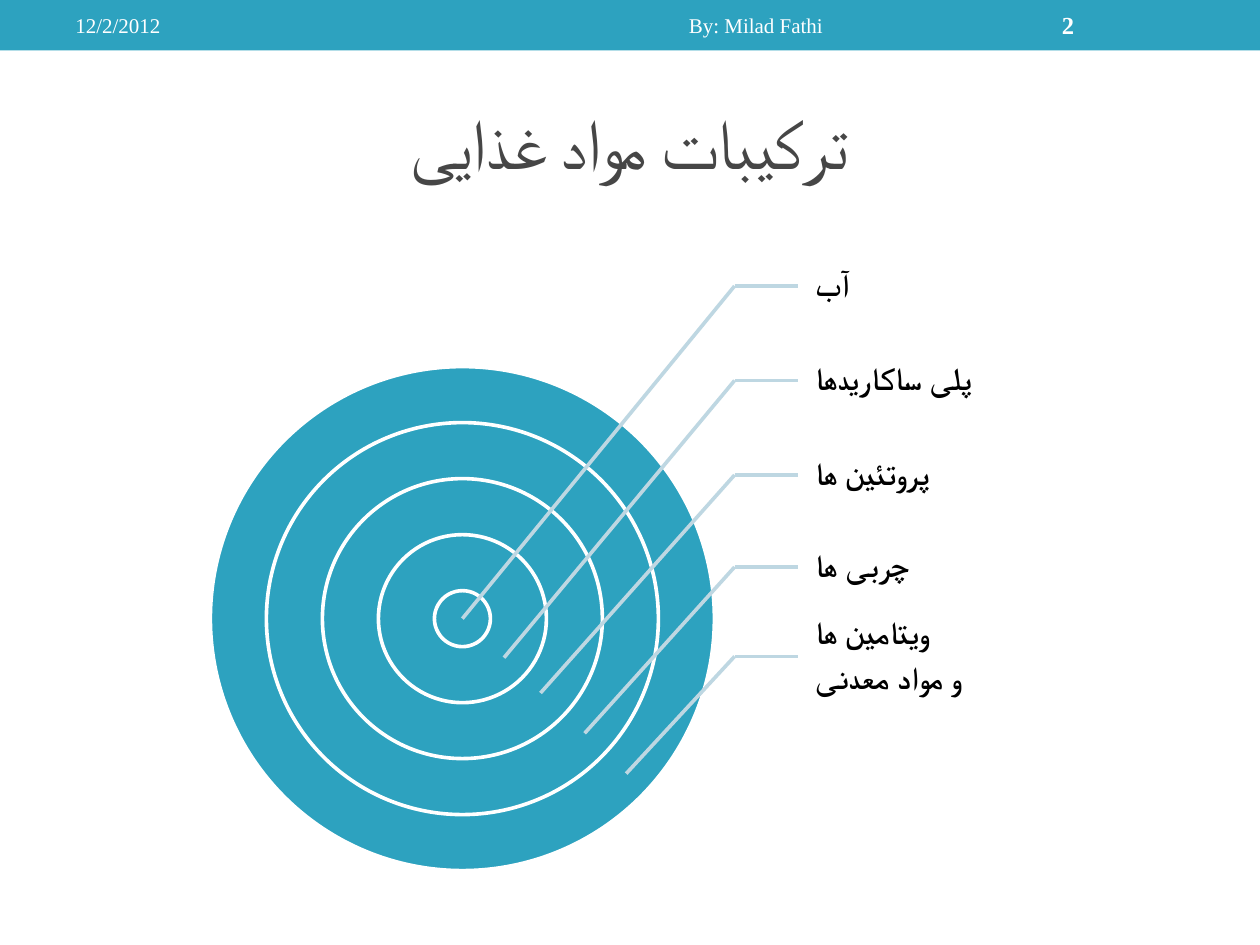
from lxml.etree import SubElement
from pptx import Presentation
from pptx.dml.color import RGBColor
from pptx.enum.shapes import MSO_CONNECTOR, MSO_SHAPE
from pptx.enum.text import MSO_ANCHOR, MSO_AUTO_SIZE, PP_ALIGN
from pptx.oxml.ns import qn
from pptx.util import Inches, Pt

TEAL, PALE, WHITE, GREY, BLACK = "2DA2BF", "BED7E2", "FFFFFF", "464646", "000000"
CENTER = (3.67, 4.91)
OUTER_DIAMETER = 4
RING_STEPS = (9, 7, 5, 3, 1)
ELBOW_X, LABEL_X = 5.83, 6.33
LABEL_WIDTH, LABEL_HEIGHT = 2, 0.71

# Label lines, height of the leader line, point it leads to
COMPONENTS = [
    (["آب"], 2.27, CENTER),
    (["پلی ساکاریدها"], 3.02, (4, 5.22)),
    (["پروتئین ها"], 3.77, (4.29, 5.5)),
    (["چربی ها"], 4.5, (4.64, 5.82)),
    (["ویتامین ها", "و مواد معدنی"], 5.21, (4.97, 6.14)),
]


def color(value):
    return RGBColor.from_string(value)


def apply(target, values):
    for name, value in values.items():
        setattr(target, name, value)


class FoodPage:
    """Holds the style and the slide being filled."""

    font = "Times New Roman"
    line_width = Pt(2.08)
    label_insets = {
        "margin_left": Inches(0.14),
        "margin_right": Inches(0.03),
        "margin_top": Inches(0.03),
        "margin_bottom": Inches(0.03),
    }
    label_spacing = {"line_spacing": 0.9, "space_after": Pt(6.3)}

    def __init__(self, deck):
        self.page = deck.slides.add_slide(deck.slide_layouts[5])

    def fill_text(self, box, lines, size, ink, bold=False, align=PP_ALIGN.LEFT,
                  rtl=False, tracking=None, frame_format=None, para_format=None):
        frame = box.text_frame
        apply(frame, {
            "word_wrap": True,
            "auto_size": MSO_AUTO_SIZE.NONE,
            "vertical_anchor": MSO_ANCHOR.MIDDLE,
            **(frame_format or {}),
        })
        for index, line in enumerate(lines):
            para = frame.add_paragraph() if index else frame.paragraphs[0]
            apply(para, {"alignment": align, **(para_format or {})})
            if rtl:
                para._p.get_or_add_pPr().set("rtl", "1")
            span = para.add_run()
            span.text = line
            apply(span.font, {"name": self.font, "size": Pt(size), "bold": bold})
            span.font.color.rgb = color(ink)
            properties = span.font._element
            SubElement(properties, qn("a:cs")).set("typeface", self.font)
            if tracking is not None:
                properties.set("spc", str(tracking * 100))

    def title(self, text, left, top, width, height):
        box = self.page.shapes.title
        apply(box, {"left": Inches(left), "top": Inches(top),
                    "width": Inches(width), "height": Inches(height)})
        self.fill_text(box, [text], 40, GREY, align=PP_ALIGN.CENTER, rtl=True, tracking=-1)

    def text(self, lines, left, top, width, height, **style):
        box = self.page.shapes.add_textbox(
            Inches(left), Inches(top), Inches(width), Inches(height))
        self.fill_text(box, lines, **style)

    def shape(self, kind, left, top, width, height, outline=None):
        shape = self.page.shapes.add_shape(
            kind, Inches(left), Inches(top), Inches(width), Inches(height))
        shape.shadow.inherit = False
        shape.fill.solid()
        shape.fill.fore_color.rgb = color(TEAL)
        if outline:
            shape.line.color.rgb = color(outline)
            shape.line.width = self.line_width
        else:
            shape.line.fill.background()

    def ring(self, diameter):
        left, top = (middle - diameter / 2 for middle in CENTER)
        self.shape(MSO_SHAPE.OVAL, left, top, diameter, diameter, WHITE)

    def line(self, start, end):
        line = self.page.shapes.add_connector(
            MSO_CONNECTOR.STRAIGHT, *(Inches(value) for value in (*start, *end)))
        line.line.color.rgb = color(PALE)
        line.line.width = self.line_width
        SubElement(line._element.spPr, qn("a:effectLst"))

    def component(self, lines, y, target):
        """Adds a label with its bent leader line."""
        self.text(lines, LABEL_X, y - LABEL_HEIGHT / 2, LABEL_WIDTH, LABEL_HEIGHT,
                  size=18, ink=BLACK, bold=True, rtl=True,
                  frame_format=self.label_insets, para_format=self.label_spacing)
        elbow = (ELBOW_X, y)
        self.line(elbow, (LABEL_X, y))
        self.line(elbow, target)

    def header(self):
        self.shape(MSO_SHAPE.RECTANGLE, 0, 0, 10, 0.4)
        for text, left, width, style in (
            ("12/2/2012", 0.5, 3.17, {"size": 12}),
            ("2", 8.33, 1.17, {"size": 14, "bold": True}),
            ("By: Milad Fathi", 3.75, 4.5, {"size": 12, "align": PP_ALIGN.CENTER}),
        ):
            self.text([text], left, 0.02, width, 0.36, ink=WHITE, **style)


def main():
    deck = Presentation()
    apply(deck, {"slide_width": Inches(10), "slide_height": Inches(7.5)})
    page = FoodPage(deck)
    page.header()
    page.title("ترکیبات مواد غذایی", 0.5, 0.58, 9, 1.08)
    for step in RING_STEPS:
        page.ring(OUTER_DIAMETER * step / RING_STEPS[0])
    for lines, y, target in COMPONENTS:
        page.component(lines, y, target)
    deck.save("out.pptx")


if __name__ == "__main__":
    main()
